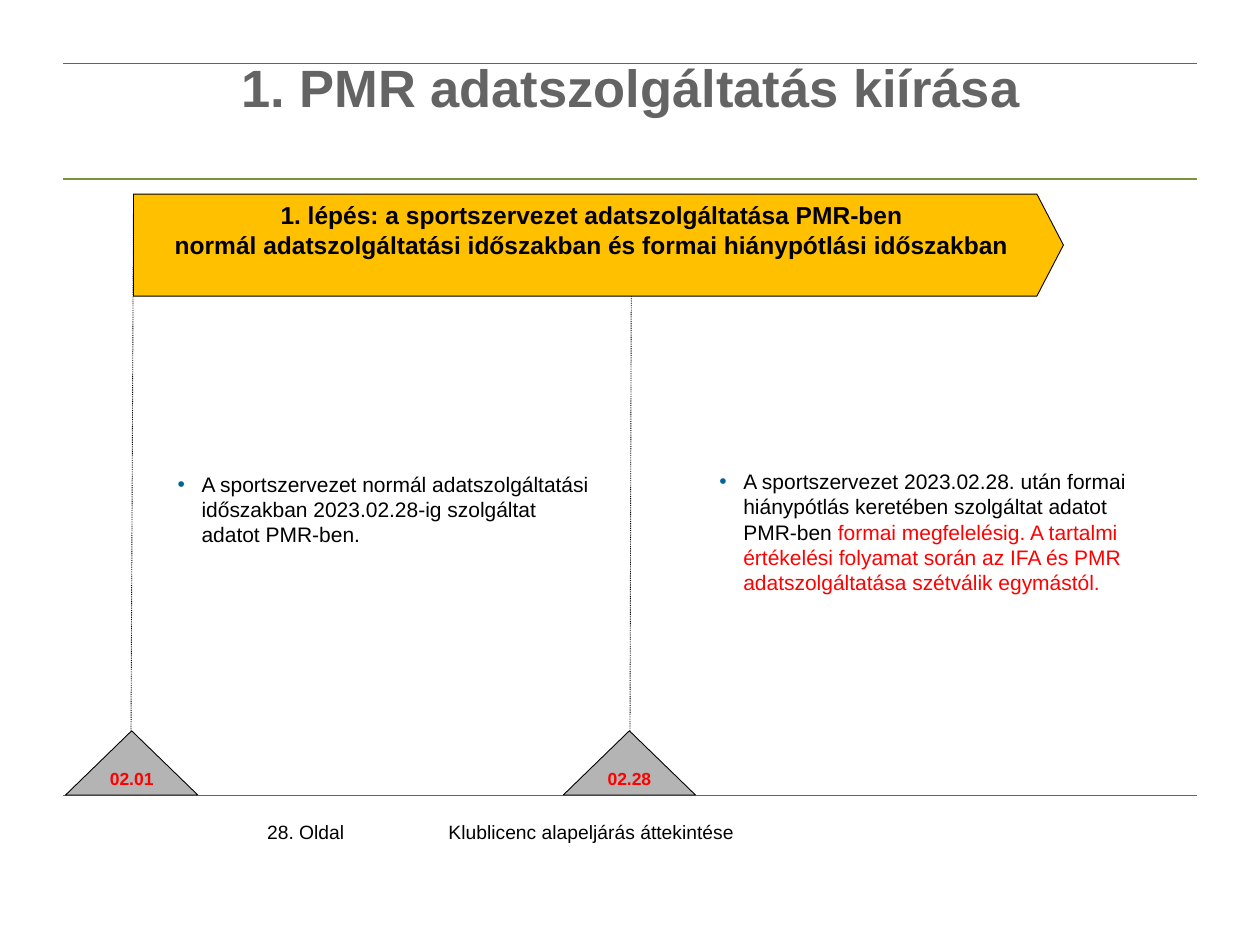
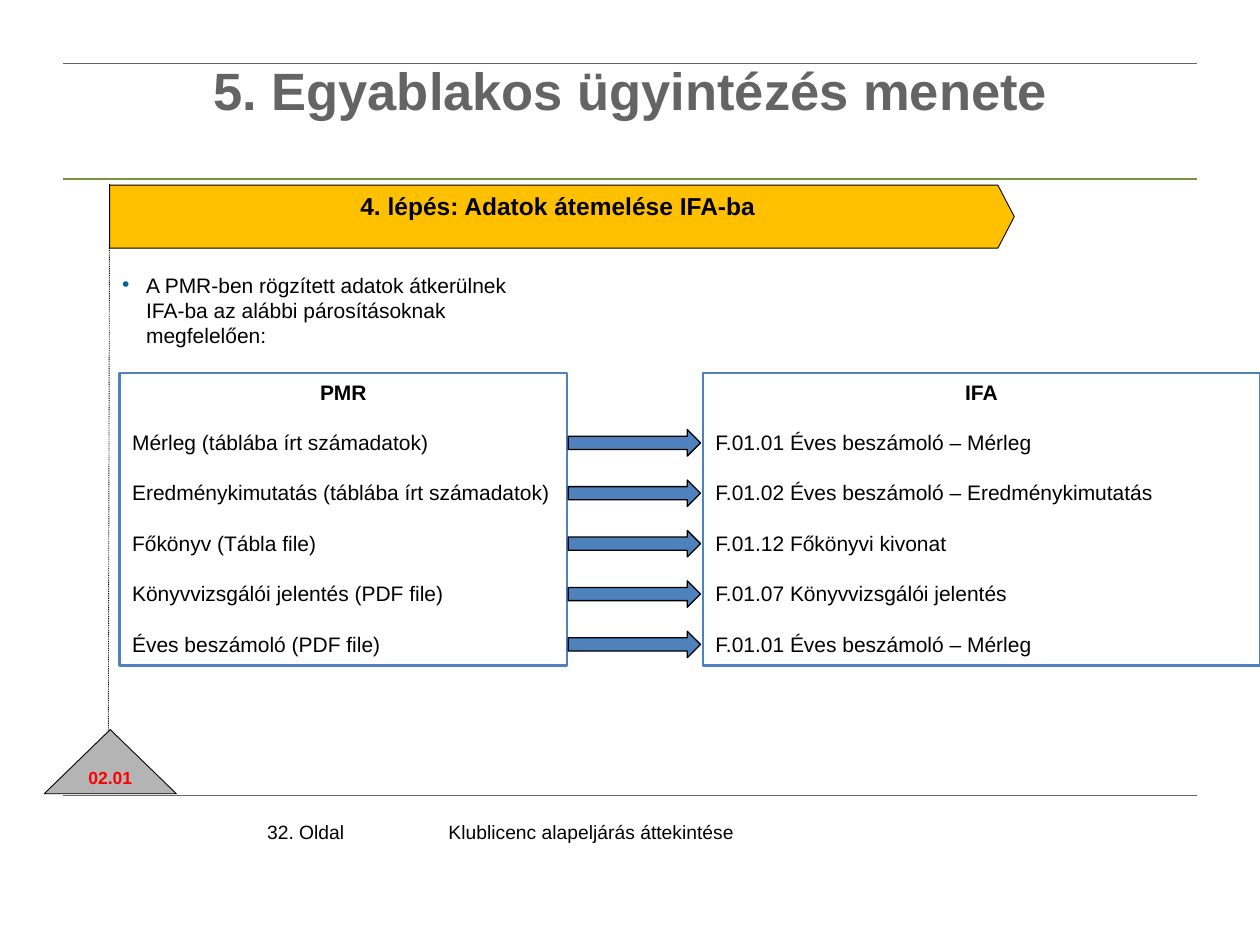
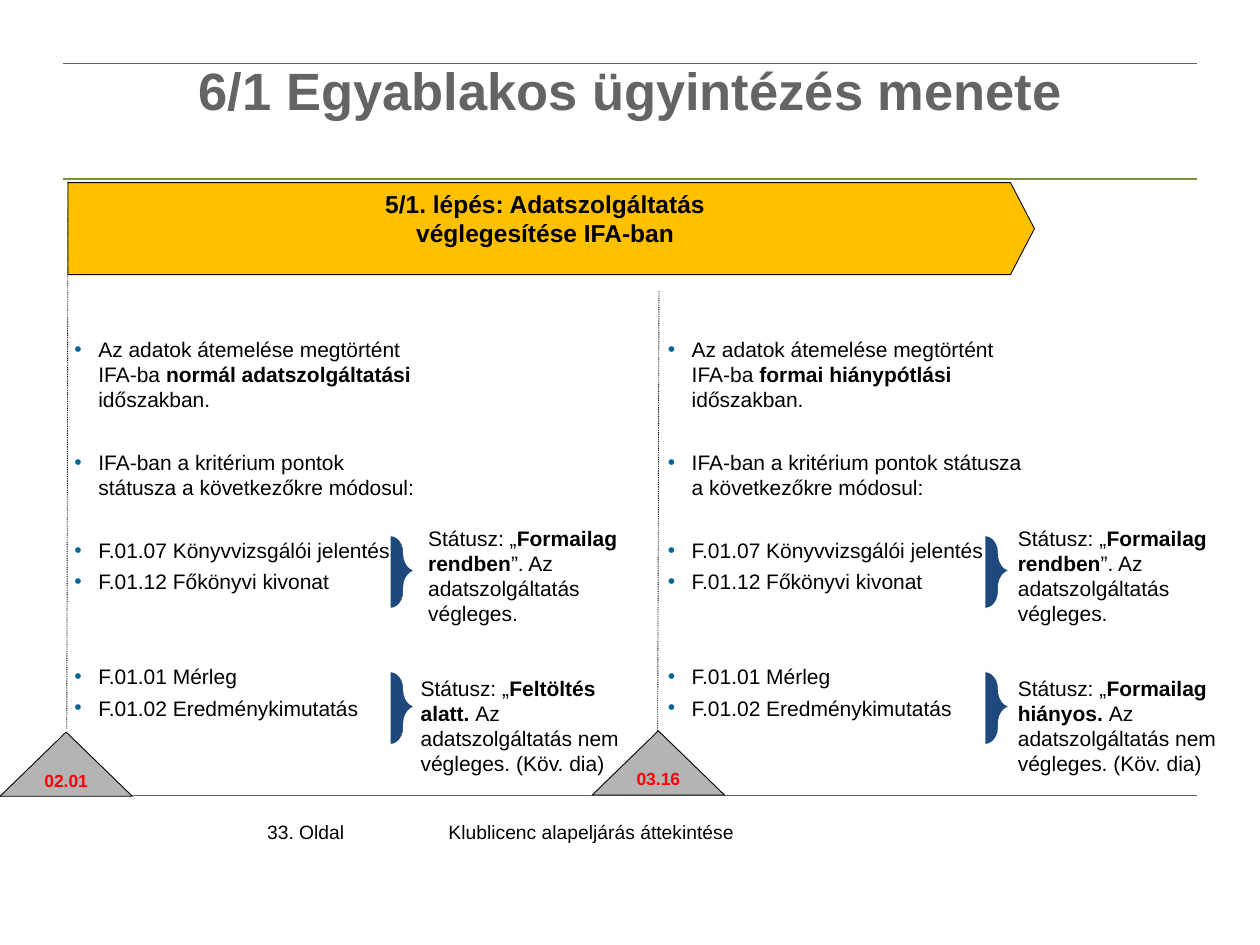
from lxml.etree import SubElement
from pptx import Presentation
from pptx.dml.color import RGBColor
from pptx.enum.dml import MSO_LINE
from pptx.enum.shapes import MSO_CONNECTOR, MSO_SHAPE
from pptx.enum.text import MSO_ANCHOR, PP_ALIGN
from pptx.oxml.ns import qn
from pptx.util import Inches, Pt

BLACK = RGBColor(0x00, 0x00, 0x00)
WHITE = RGBColor(0xFF, 0xFF, 0xFF)
RED = RGBColor(0xFF, 0x00, 0x00)
GRAY = RGBColor(0x64, 0x64, 0x64)
SILVER = RGBColor(0xB4, 0xB4, 0xB4)
GREEN = RGBColor(0x77, 0x93, 0x3C)
AMBER = RGBColor(0xFF, 0xC0, 0x00)
BLUE = RGBColor(0x4F, 0x81, 0xBD)
NAVY = RGBColor(0x1F, 0x49, 0x7D)
TEAL = RGBColor(0x00, 0x66, 0x99)

BODY = {"name": "Arial", "size": Pt(12), "bold": False, "color": BLACK}
FOOTER = BODY | {"size": Pt(11)}
TITLE = BODY | {"size": Pt(30), "bold": True, "color": GRAY}
BANNER = BODY | {"size": Pt(14), "bold": True}
DATE = BODY | {"size": Pt(10), "bold": True, "color": RED}
BOLD = {"bold": True}
CENTER = {"alignment": PP_ALIGN.CENTER}
PLAIN_INSETS = (0, 0, 0, 0)
SHAPE_INSETS = (0.05, 0.05, 0.05, 0.05)
BOX_INSETS = (0.1, 0.05, 0.1, 0.05)


class SlideBuilder:
    """Hold the deck style and the current page, and draw each kind of element."""

    def __init__(self):
        self.deck = Presentation()
        self.deck.slide_width, self.deck.slide_height = Inches(10), Inches(7.5)
        self.page = None

    def start(self, title, number, title_top=0.5):
        self.page = self.deck.slides.add_slide(self.deck.slide_layouts[6])
        self.text((3.56, 6.51, 3.43, 0.22), ["Klublicenc alapeljárás áttekintése"], FOOTER)
        self.text((2.12, 6.51, 0.73, 0.22), [f"{number}. Oldal"], FOOTER)
        for y, color, width in ((1.42, GREEN, 1), (6.31, GRAY, 0.25), (0.5, GRAY, 0.5)):
            self.line((0.5, y), (9.5, y), color, width)
        self.text((0.5, title_top, 9.01, 0.94), [title], TITLE, (0, 0.04, 0, 0),
                  layout=CENTER | {"line_spacing": 0.85})

    def line(self, start, end, color=BLACK, width=0.5, dash=None):
        ends = [Inches(value) for value in (*start, *end)]
        line = self.page.shapes.add_connector(MSO_CONNECTOR.STRAIGHT, *ends)
        SubElement(line._element.spPr, qn("a:effectLst"))
        line.line.color.rgb = color
        line.line.width = Pt(width)
        line.line.dash_style = dash

    def timeline(self, start, end):
        self.line(start, end, dash=MSO_LINE.ROUND_DOT)

    def shape(self, kind, place, fill, color, width, adjustments=()):
        shape = self.page.shapes.add_shape(kind, *map(Inches, place))
        shape.shadow.inherit = False
        if fill is None:
            shape.fill.background()
        else:
            shape.fill.solid()
            shape.fill.fore_color.rgb = fill
        shape.line.color.rgb = color
        shape.line.width = Pt(width)
        for index, value in enumerate(adjustments):
            shape.adjustments[index] = value
        return shape

    def fill_text(self, box, paras, style, insets, anchor=MSO_ANCHOR.TOP, wrap=True,
                  layout=None, gaps=(), bullets=False):
        frame = box.text_frame
        frame.word_wrap, frame.vertical_anchor = wrap, anchor
        for side, inset in zip(("left", "top", "right", "bottom"), insets):
            setattr(frame, f"margin_{side}", Inches(inset))
        for index, spans in enumerate(paras):
            para = frame.add_paragraph() if index else frame.paragraphs[0]
            para.alignment = PP_ALIGN.LEFT
            for name, value in (layout or {}).items():
                setattr(para, name, value)
            if index and gaps:
                para.space_before = Pt(gaps[index - 1])
            if bullets:
                self.bullet(para)
            for part in [(spans, {})] if isinstance(spans, str) else spans:
                self.span(para, part[0], style | part[1])

    def bullet(self, para):
        properties = para._p.get_or_add_pPr()
        properties.set("marL", str(Inches(0.19)))
        properties.set("indent", str(-Inches(0.19)))
        SubElement(SubElement(properties, qn("a:buClr")), qn("a:srgbClr"), val=str(TEAL))
        SubElement(properties, qn("a:buFont"), typeface="Arial")
        SubElement(properties, qn("a:buChar"), char="•")

    def span(self, para, text, style):
        span = para.add_run()
        span.text = text
        for name, value in style.items():
            if name == "color":
                span.font.color.rgb = value
            else:
                setattr(span.font, name, value)

    def text(self, place, paras, style=BODY, insets=PLAIN_INSETS, **options):
        box = self.page.shapes.add_textbox(*map(Inches, place))
        self.fill_text(box, paras, style, insets, **options)

    def banner(self, place, paras):
        shape = self.shape(MSO_SHAPE.PENTAGON, place, AMBER, BLACK, 0.5, [0.26])
        self.fill_text(shape, paras, BANNER, SHAPE_INSETS, wrap=False, layout=CENTER)

    def milestone(self, left, date, top=5.8):
        shape = self.shape(MSO_SHAPE.ISOSCELES_TRIANGLE, (left, top, 1.05, 0.51),
                           SILVER, BLACK, 0.5)
        self.fill_text(shape, [date], DATE, SHAPE_INSETS, MSO_ANCHOR.MIDDLE, layout=CENTER)

    def system_box(self, place, heading, items):
        shape = self.shape(MSO_SHAPE.RECTANGLE, place, None, BLUE, 1.5)
        self.fill_text(shape, [[(heading, BOLD)], *items], BODY, BOX_INSETS,
                       gaps=[14.4] * len(items))
        shape.text_frame.paragraphs[0].alignment = PP_ALIGN.CENTER

    def arrow(self, place):
        self.shape(MSO_SHAPE.RIGHT_ARROW, place, BLUE, BLACK, 0.75)

    def brace(self, left, top):
        self.shape(MSO_SHAPE.RIGHT_BRACE, (left, top, 0.21, 0.58), NAVY, WHITE, 0.75,
                   [0.64, 0.48])

    def status(self, place, name, rest):
        self.text(place, [[("Státusz: „", {}), (name, BOLD), (rest, {})]],
                  insets=BOX_INSETS)


def build_reporting(builder):
    builder.start("1. PMR adatszolgáltatás kiírása", 28, 0.47)
    builder.timeline((1.06, 1.54), (1.04, 5.8))
    builder.timeline((5.01, 2.35), (5, 5.81))
    builder.banner((1.06, 1.54, 7.38, 0.81), [
        "1. lépés: a sportszervezet adatszolgáltatása PMR-ben",
        "normál adatszolgáltatási időszakban és formai hiánypótlási időszakban"])
    builder.milestone(0.52, "02.01")
    builder.milestone(4.47, "02.28")
    builder.text((1.41, 3.74, 3.34, 0.81), [
        "A sportszervezet normál adatszolgáltatási időszakban 2023.02.28-ig "
        "szolgáltat adatot PMR-ben."], bullets=True)
    builder.text((5.71, 3.72, 3.34, 1.11), [[
        ("A sportszervezet 2023.02.28. után formai hiánypótlás keretében "
         "szolgáltat adatot PMR-ben ", {}),
        ("formai megfelelésig. A tartalmi értékelési folyamat során az IFA és PMR "
         "adatszolgáltatása szétválik egymástól.", {"color": RED})]], bullets=True)


def build_transfer(builder):
    builder.start("5. Egyablakos ügyintézés menete", 32)
    builder.milestone(0.35, "02.01", 5.79)
    builder.timeline((0.87, 1.46), (0.86, 5.81))
    builder.banner((0.87, 1.47, 7.18, 0.5), ["4. lépés: Adatok átemelése IFA-ba"])
    builder.text((0.97, 2.16, 3.34, 0.7), [
        "A PMR-ben rögzített adatok átkerülnek IFA-ba az alábbi párosításoknak "
        "megfelelően:"], bullets=True)
    pairs = [
        ("Mérleg (táblába írt számadatok)", "F.01.01 Éves beszámoló – Mérleg"),
        ("Eredménykimutatás (táblába írt számadatok)",
         "F.01.02 Éves beszámoló – Eredménykimutatás"),
        ("Főkönyv (Tábla file)", "F.01.12 Főkönyvi kivonat"),
        ("Könyvvizsgálói jelentés (PDF file)", "F.01.07 Könyvvizsgálói jelentés"),
        ("Éves beszámoló (PDF file)", "F.01.01 Éves beszámoló – Mérleg")]
    sources, targets = zip(*pairs)
    builder.system_box((0.95, 2.96, 3.55, 2.32), "PMR", sources)
    builder.system_box((5.58, 2.96, 4.42, 2.32), "IFA", targets)
    for row in range(len(pairs)):
        builder.arrow((4.51, 3.41 + 0.4 * row, 1.05, 0.21))


def build_finalising(builder):
    builder.start("6/1 Egyablakos ügyintézés menete", 33)
    builder.timeline((0.54, 1.44), (0.53, 5.79))
    builder.timeline((5.23, 2.31), (5.22, 5.81))
    builder.banner((0.54, 1.45, 7.67, 0.73),
                   ["5/1. lépés: Adatszolgáltatás", "véglegesítése IFA-ban"])
    builder.milestone(0, "02.01", 5.81)
    builder.milestone(4.7, "03.16")
    columns = [
        (0.59, 2.79, "normál adatszolgáltatási ", 3.1, (3.3, 1.91), (3.24, 1.9),
         "Feltöltés alatt. "),
        (5.3, 2.84, "formai hiánypótlási ", 7.82, (7.98, 1.79), (7.98, 1.79),
         "Formailag hiányos. ")]
    for left, width, period, brace_left, final, pending, pending_name in columns:
        builder.text((left, 2.67, width, 3.1), [
            [("Az adatok átemelése megtörtént IFA-ba ", {}), (period, BOLD),
             ("időszakban.", {})],
            "IFA-ban a kritérium pontok státusza a következőkre módosul:",
            "F.01.07 Könyvvizsgálói jelentés",
            "F.01.12 Főkönyvi kivonat",
            "F.01.01 Mérleg",
            "F.01.02 Eredménykimutatás"], gaps=(21.5, 21.5, 3.5, 39.8, 3.5), bullets=True)
        for top in (4.25, 5.33):
            builder.brace(brace_left, top)
        builder.status((final[0], 4.12, final[1], 0.91), "Formailag rendben",
                       "”. Az adatszolgáltatás végleges.")
        builder.status((pending[0], 5.31, pending[1], 0.91), pending_name,
                       "Az adatszolgáltatás nem végleges. (Köv. dia)")


def main():
    builder = SlideBuilder()
    for build in (build_reporting, build_transfer, build_finalising):
        build(builder)
    builder.deck.save("out.pptx")


if __name__ == "__main__":
    main()
